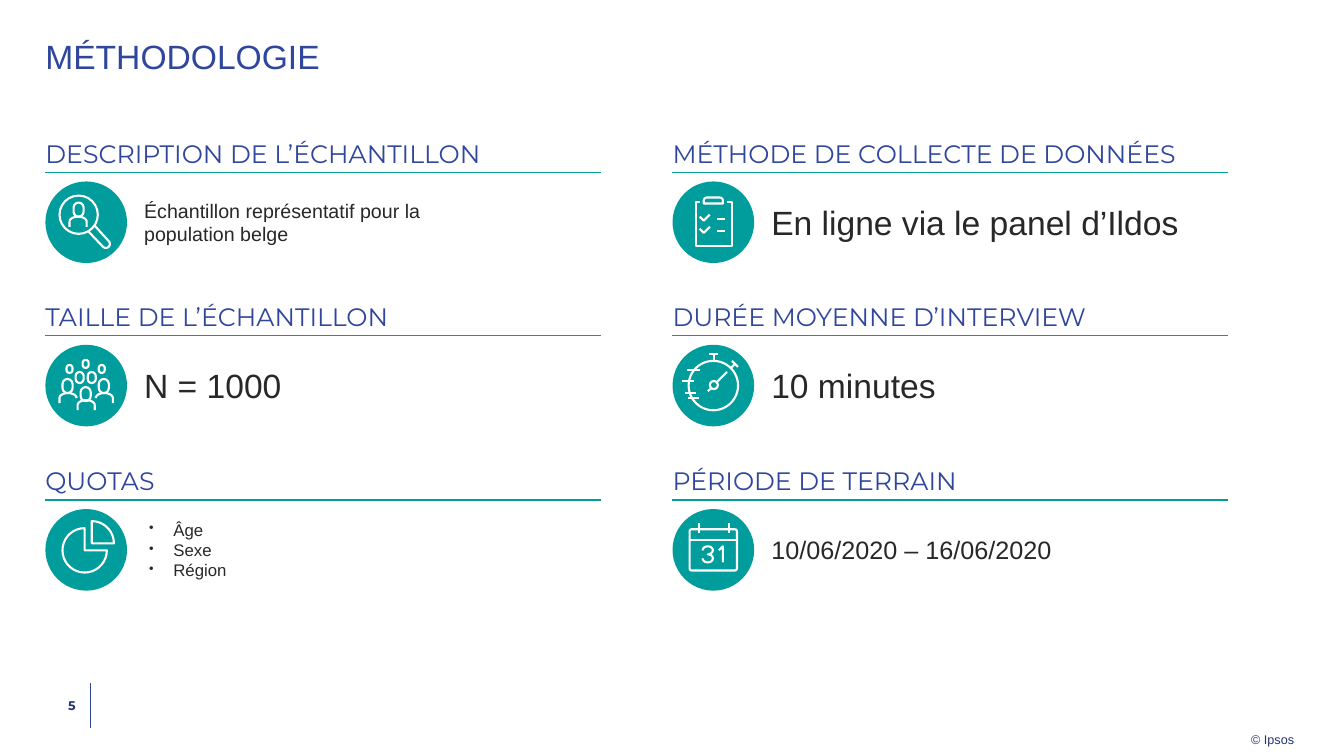
import math

from lxml import etree
from pptx import Presentation
from pptx.dml.color import RGBColor
from pptx.enum.shapes import MSO_CONNECTOR, MSO_SHAPE
from pptx.enum.text import MSO_ANCHOR, PP_ALIGN
from pptx.oxml.ns import qn
from pptx.util import Inches, Pt

STRAIGHT = MSO_CONNECTOR.STRAIGHT
OVAL, ROUNDED = MSO_SHAPE.OVAL, MSO_SHAPE.ROUNDED_RECTANGLE
ROUND_TOP = MSO_SHAPE.ROUND_2_SAME_RECTANGLE
TOP, MIDDLE, BOTTOM = MSO_ANCHOR.TOP, MSO_ANCHOR.MIDDLE, MSO_ANCHOR.BOTTOM
LEFT, RIGHT = PP_ALIGN.LEFT, PP_ALIGN.RIGHT

BLUE, NAVY, TEAL, DARK, WHITE = "2F469C", "233475", "009D9C", "282828", "FFFFFF"
BODY, HEAD = "Arial", "Montserrat"

COLUMNS = (0.45, 6.67)
ROWS = (1.32, 2.94, 4.57)
CARD_W, HEAD_H = 5.51, 0.39
ICON_DY, ICON_SIZE, BODY_DX = 0.48, 0.81, 0.98


def color(value):
    return RGBColor.from_string(value)


def arc(cx, cy, rx, ry, start, end):
    """Points along an ellipse, in degrees clockwise from the right."""
    steps = max(2, abs(end - start) // 10)
    angles = [math.radians(start + (end - start) * i / steps) for i in range(steps + 1)]
    return [(cx + rx * math.cos(a), cy + ry * math.sin(a)) for a in angles]


class Deck:
    def __init__(self):
        self.prs = Presentation()
        self.prs.slide_width, self.prs.slide_height = Inches(13.33), Inches(7.5)
        self.s = self.prs.slides.add_slide(self.prs.slide_layouts[6])
        self.x0 = self.y0 = 0  # origin of the icon being drawn

    def text(self, x, y, w, h, lines, size, hue=DARK, font=BODY, anchor=TOP, align=LEFT,
             insets=(0, 0, 0, 0), bold=False, wrap=True, bullets=False, spacing=None):
        tf = self.s.shapes.add_textbox(Inches(x), Inches(y), Inches(w), Inches(h)).text_frame
        tf.word_wrap, tf.vertical_anchor = wrap, anchor
        tf.margin_left, tf.margin_top, tf.margin_right, tf.margin_bottom = map(Inches, insets)
        for i, line in enumerate(lines):
            p = tf.paragraphs[0] if i == 0 else tf.add_paragraph()
            p.alignment = align
            if spacing:
                p.line_spacing = spacing
            if bullets:
                pPr = p._p.get_or_add_pPr()
                pPr.set("marL", str(Inches(0.29)))
                pPr.set("indent", str(Inches(-0.24)))
                etree.SubElement(pPr, qn("a:buSzPct")).set("val", "80000")
                etree.SubElement(pPr, qn("a:buChar")).set("char", "•")
            r = p.add_run()
            r.text = line
            r.font.name, r.font.size, r.font.bold = font, Pt(size), bold
            r.font.color.rgb = color(hue)

    def line(self, x1, y1, x2, y2, hue=WHITE, width=1.5):
        c = self.s.shapes.add_connector(STRAIGHT, Inches(self.x0 + x1), Inches(self.y0 + y1),
                                        Inches(self.x0 + x2), Inches(self.y0 + y2))
        c.line.color.rgb, c.line.width = color(hue), Pt(width)
        etree.SubElement(c._element.spPr, qn("a:effectLst"))

    def stroke(self, sp):
        sp.shadow.inherit = False
        sp.fill.background()
        sp.line.color.rgb, sp.line.width = color(WHITE), Pt(1.5)

    def shape(self, kind, x, y, w, h, round_by=None):
        sp = self.s.shapes.add_shape(kind, Inches(self.x0 + x), Inches(self.y0 + y),
                                     Inches(w), Inches(h))
        if round_by is not None:
            sp.adjustments[0] = round_by
        self.stroke(sp)
        return sp

    def path_of(self, points, close=False):
        pts = [(Inches(self.x0 + x), Inches(self.y0 + y)) for x, y in points]
        builder = self.s.shapes.build_freeform(*pts[0], scale=1.0)
        builder.add_line_segments(pts[1:], close=close)
        self.stroke(builder.convert_to_shape())

    def disc(self):
        sp = self.shape(OVAL, 0, 0, ICON_SIZE, ICON_SIZE)
        sp.fill.solid()
        sp.fill.fore_color.rgb = color(TEAL)
        sp.line.fill.background()

    def head(self, x, y, w, h):
        self.shape(ROUNDED, x, y, w, h, 0.5)

    def shoulders(self, x, y, left=True, right=True):
        points = arc(x + 0.085, y + 0.05, 0.085, 0.05, 180, 360)
        if left:
            points.insert(0, (x, y + 0.1))
        if right:
            points.append((x + 0.17, y + 0.1))
        self.path_of(points)

    def card(self, x, y, title, icon, lines, size, w=4.53, h=0.4, bullets=False):
        self.text(x, y, CARD_W, HEAD_H, [title], size=18, hue=BLUE, font=HEAD,
                  anchor=BOTTOM, insets=(0, 0, 0, 0.04))
        self.line(x, y + HEAD_H, x + CARD_W, y + HEAD_H, TEAL, 1)
        middle = y + ICON_DY + ICON_SIZE / 2
        self.text(x + BODY_DX, middle - h / 2, w, h, lines, size, anchor=MIDDLE, bullets=bullets)
        self.x0, self.y0 = x, y + ICON_DY
        self.disc()
        icon(self)
        self.x0 = self.y0 = 0


# Icons, in inches from the corner of their disc
def magnifier(d):
    d.shape(OVAL, 0.14, 0.14, 0.38, 0.38)
    d.head(0.28, 0.21, 0.1, 0.14)
    d.shoulders(0.24, 0.35)
    d.path_of([(0.49, 0.44), *arc(0.6, 0.62, 0.04, 0.04, -45, 135), (0.43, 0.5)])


def crowd(d):
    for x, y in ((0.35, 0.42), (0.17, 0.34), (0.53, 0.34)):
        d.head(x, y, 0.1, 0.14)
    for x in (0.3, 0.42):
        d.head(x, 0.27, 0.08, 0.11)
    for x, y in ((0.37, 0.15), (0.21, 0.2), (0.53, 0.2)):
        d.head(x, y, 0.06, 0.08)
    d.shoulders(0.32, 0.55)
    d.shoulders(0.14, 0.48, right=False)
    d.shoulders(0.5, 0.48, left=False)


def pie(d):
    for cx, cy, start, end in ((0.39, 0.41, 0, 270), (0.46, 0.34, 270, 360)):
        d.path_of([(cx, cy), *arc(cx, cy, 0.22, 0.22, start, end)], close=True)


def clipboard(d):
    d.shape(ROUND_TOP, 0.31, 0.16, 0.19, 0.06, 0.5)
    d.path_of([(0.54, 0.2), (0.59, 0.2), (0.59, 0.64), (0.23, 0.64), (0.23, 0.2), (0.27, 0.2)])
    for y in (0.33, 0.45):
        d.path_of([(0.27, y + 0.02), (0.31, y + 0.06), (0.37, y)])
        d.line(0.44, y + 0.04, 0.52, y + 0.04)


def stopwatch(d):
    d.shape(OVAL, 0.16, 0.16, 0.49, 0.49)
    d.shape(OVAL, 0.37, 0.36, 0.08, 0.08)
    crown = ((0.36, 0.09, 0.45, 0.09), (0.41, 0.09, 0.41, 0.16))
    button = ((0.59, 0.16, 0.65, 0.22), (0.62, 0.19, 0.58, 0.23))
    hand = ((0.39, 0.43, 0.35, 0.46), (0.54, 0.27, 0.43, 0.38))
    for ends in crown + button + hand:
        d.line(*ends)
    for x, y, w in ((0.14, 0.25, 0.13), (0.09, 0.36, 0.12), (0.12, 0.48, 0.11), (0.15, 0.53, 0.11)):
        d.line(x, y, x + w, y)


def calendar(d):
    d.shape(ROUNDED, 0.17, 0.2, 0.47, 0.41, 0.05)
    d.line(0.17, 0.31, 0.64, 0.31)
    for x in (0.26, 0.56):
        d.line(x, 0.14, x, 0.24)
    d.path_of(arc(0.35, 0.41, 0.05, 0.04, 180, 450) + arc(0.35, 0.49, 0.05, 0.04, -90, 180))
    d.path_of([(0.5, 0.53), (0.5, 0.37), (0.46, 0.41)])


def main():
    d = Deck()

    # Title
    d.text(0.45, 0.4, 12.44, 0.42, ["MÉTHODOLOGIE"], size=24, hue=BLUE, spacing=0.9)

    # Cards, column by column
    cards = (
        (dict(title="DESCRIPTION DE L’ÉCHANTILLON", icon=magnifier, size=14, w=3.4, h=0.47,
              lines=["Échantillon représentatif pour la population belge"]),
         dict(title="TAILLE DE L’ÉCHANTILLON", icon=crowd, size=24, lines=["N = 1000"]),
         dict(title="QUOTAS", icon=pie, size=12, h=0.61, bullets=True,
              lines=["Âge", "Sexe", "Région"])),
        (dict(title="MÉTHODE DE COLLECTE DE DONNÉES", icon=clipboard, size=24,
              lines=["En ligne via le panel d’Ildos"]),
         dict(title="DURÉE MOYENNE D’INTERVIEW", icon=stopwatch, size=24, lines=["10 minutes"]),
         dict(title="PÉRIODE DE TERRAIN", icon=calendar, size=18, h=0.3,
              lines=["10/06/2020 – 16/06/2020"])),
    )
    for x, column in zip(COLUMNS, cards):
        for y, content in zip(ROWS, column):
            d.card(x, y, **content)

    # Footer
    d.text(0.45, 6.78, 0.45, 0.43, ["5"], size=9, hue=NAVY, font=HEAD, bold=True,
           anchor=MIDDLE, align=RIGHT, insets=(0, 0, 0.15, 0))
    d.line(0.9, 6.78, 0.9, 7.22, BLUE, 0.5)
    d.text(12.41, 7.22, 0.43, 0.19, ["© Ipsos"], size=9, hue=NAVY, wrap=False,
           insets=(0, 0.04, 0, 0))

    d.prs.save("out.pptx")


if __name__ == "__main__":
    main()
